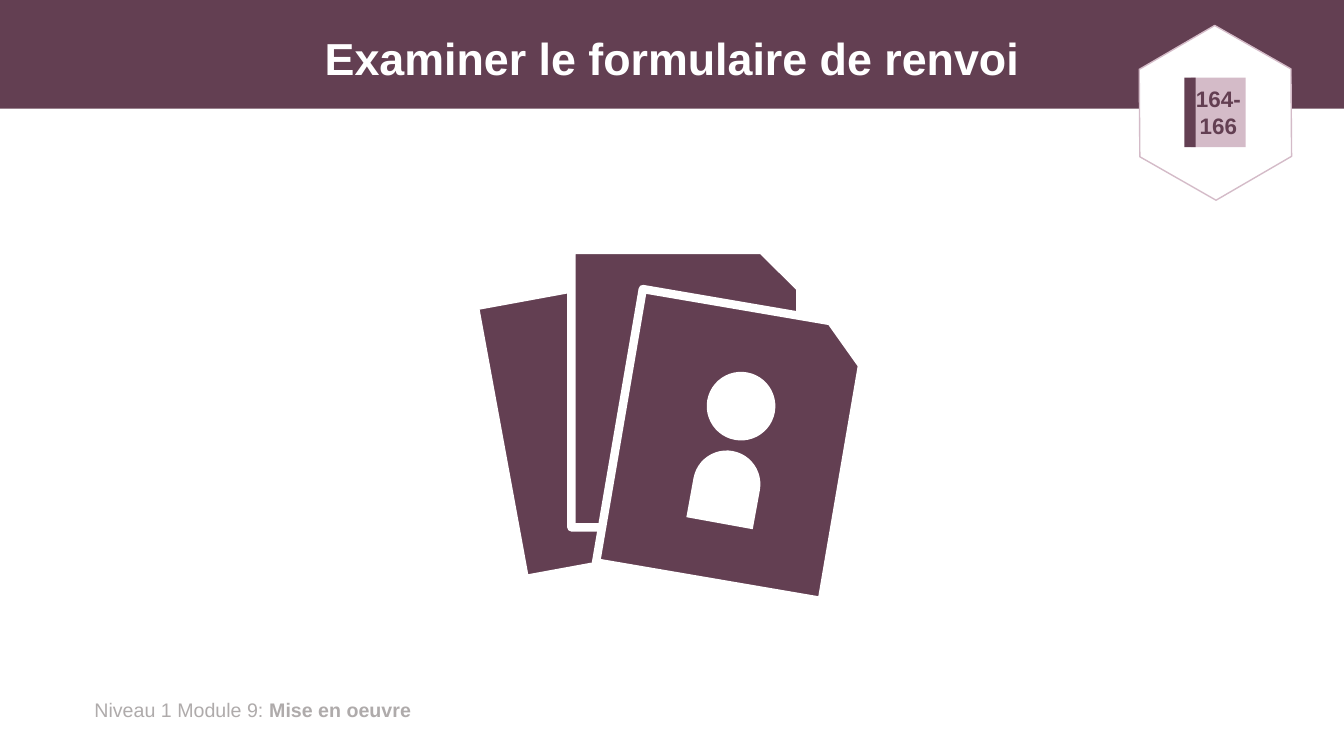
"""Build the slide on examining the referral form."""
from dataclasses import dataclass
from typing import Optional

import pptx
import pptx.dml.color
import pptx.enum.shapes
import pptx.enum.text
import pptx.util

Cm = pptx.util.Cm
Pt = pptx.util.Pt
Preset = pptx.enum.shapes.MSO_SHAPE
Align = pptx.enum.text.PP_ALIGN
Anchor = pptx.enum.text.MSO_ANCHOR

PLUM, PINK, WHITE, GREY = "633F52", "D4BBC8", "FFFFFF", "AFABAB"
CARD_SIZE = (5.77, 6.99)


@dataclass
class Piece:
    preset: Preset
    left: float
    top: float
    width: float
    height: float
    fill: str
    rotation: float = 0
    outline: Optional[str] = None
    outline_pt: float = 1
    adjustments: tuple[float, ...] = ()


def rgb(value: str) -> pptx.dml.color.RGBColor:
    return pptx.dml.color.RGBColor.from_string(value)


def draw(shapes, piece: Piece):
    shape = shapes.add_shape(piece.preset, Cm(piece.left), Cm(piece.top),
                             Cm(piece.width), Cm(piece.height))
    shape.shadow.inherit = False
    shape.rotation = piece.rotation
    shape.fill.solid()
    shape.fill.fore_color.rgb = rgb(piece.fill)
    if piece.outline:
        shape.line.color.rgb = rgb(piece.outline)
        shape.line.width = Pt(piece.outline_pt)
    else:
        shape.line.fill.background()
    for index, value in enumerate(piece.adjustments):
        shape.adjustments[index] = value
    return shape


def write(paragraph, text: str, *, size: float, color: str, bold: bool = False,
          align: Align = Align.LEFT, spacing: float = 1.0) -> None:
    paragraph.alignment = align
    paragraph.line_spacing = spacing
    run = paragraph.add_run()
    run.text = text
    run.font.name = "Arial"
    run.font.size = Pt(size)
    run.font.bold = bold
    run.font.color.rgb = rgb(color)


def add_heading(slide) -> None:
    band = draw(slide.shapes, Piece(Preset.RECTANGLE, 0, 0, 33.87, 2.74, PLUM))
    heading = slide.shapes.title
    band._element.addnext(heading._element)
    heading.left, heading.top = Cm(2.34), Cm(0.33)
    heading.width, heading.height = Cm(29.21), Cm(2.41)
    heading.text_frame.vertical_anchor = Anchor.MIDDLE
    write(heading.text_frame.paragraphs[0], "Examiner le formulaire de renvoi",
          size=32, color=WHITE, bold=True, align=Align.CENTER, spacing=0.9)


def add_footer(slide) -> None:
    footer = slide.shapes.add_textbox(Cm(2.13), Cm(17.45), Cm(11.56), Cm(0.86))
    footer.text_frame.word_wrap = True
    line = footer.text_frame.paragraphs[0]
    write(line, "Niveau 1 Module 9: ", size=14, color=GREY)
    write(line, "Mise en oeuvre", size=14, color=GREY, bold=True)


def add_forms(slide) -> None:
    forms = slide.shapes.add_group_shape().shapes
    for left, top, rotation in ((12.55, 7.14, -10.4), (14.4, 6.3, 0), (15.57, 7.72, 9.7)):
        draw(forms, Piece(Preset.SNIP_1_RECTANGLE, left, top, *CARD_SIZE, PLUM,
                          rotation, outline=WHITE, outline_pt=6))
    draw(forms, Piece(Preset.ROUND_2_SAME_RECTANGLE, 17.45, 11.35, 1.7, 1.85, WHITE,
                      10.3, adjustments=(0.5, 0)))
    draw(forms, Piece(Preset.OVAL, 17.81, 9.37, 1.73, 1.73, WHITE, 10.3))


def add_page_badge(slide) -> None:
    badge = slide.shapes.add_group_shape().shapes
    draw(badge, Piece(Preset.HEXAGON, 28.42, 0.94, 4.42, 3.81, WHITE, 29.7,
                      outline=PINK, adjustments=(0.29,)))
    book = draw(badge, Piece(Preset.RECTANGLE, 30.02, 1.96, 1.37, 1.75, PINK))
    pages = book.text_frame
    pages.word_wrap = False
    pages.vertical_anchor = Anchor.MIDDLE
    for paragraph, text in ((pages.paragraphs[0], "164-"), (pages.add_paragraph(), "166")):
        write(paragraph, text, size=16, color=PLUM, bold=True, align=Align.CENTER)
    draw(badge, Piece(Preset.RECTANGLE, 29.85, 1.96, 0.28, 1.75, PLUM))


def main() -> None:
    deck = pptx.Presentation()
    deck.slide_width, deck.slide_height = Cm(33.87), Cm(19.05)
    slide = deck.slides.add_slide(deck.slide_layouts.get_by_name("Title Only"))
    add_heading(slide)
    add_footer(slide)
    add_forms(slide)
    add_page_badge(slide)
    deck.save("out.pptx")


if __name__ == "__main__":
    main()
